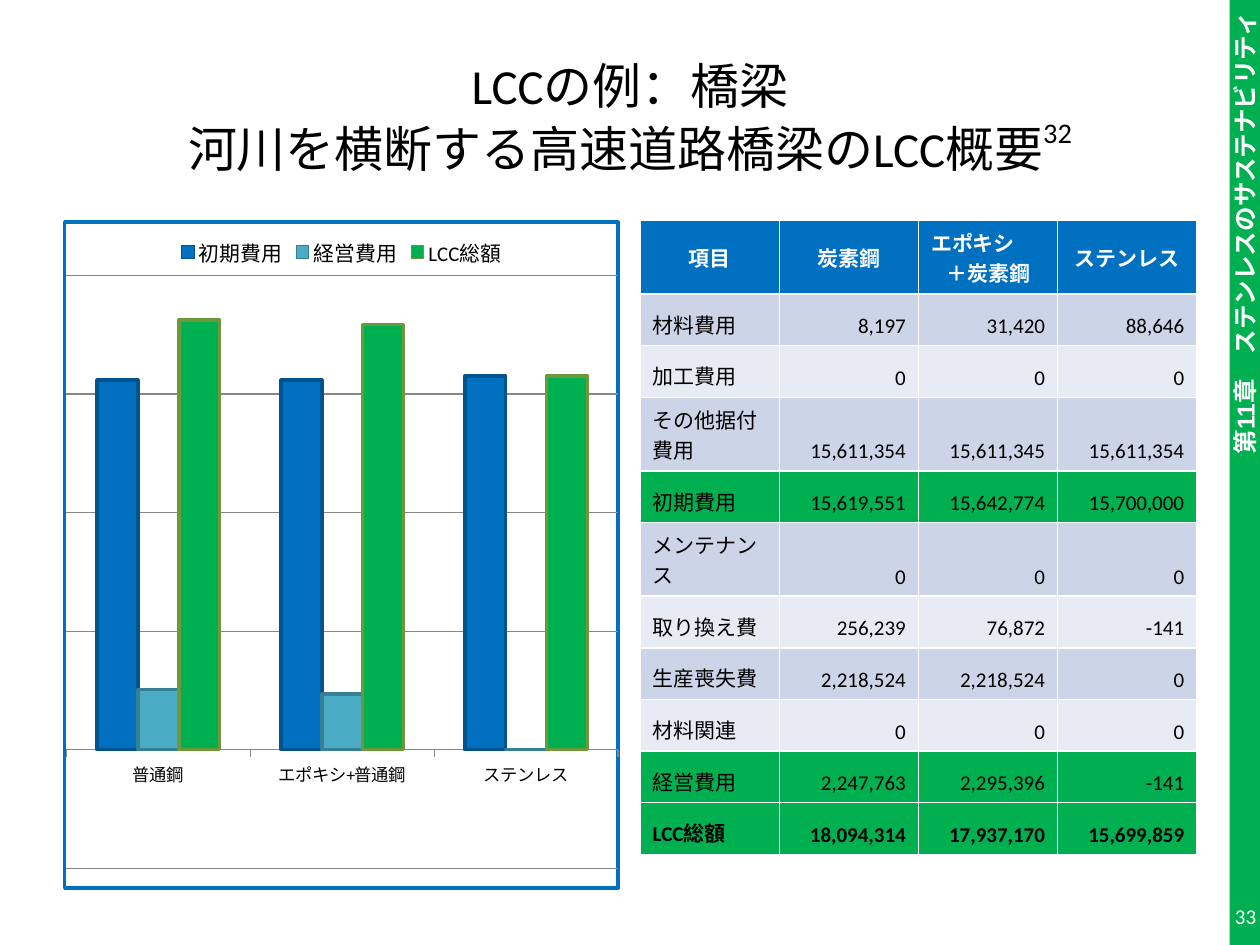
from dataclasses import dataclass

from pptx import Presentation
from pptx.chart.data import CategoryChartData
from pptx.dml.color import RGBColor
from pptx.enum.chart import XL_CHART_TYPE as ChartType, XL_LEGEND_POSITION as LegendPosition
from pptx.enum.chart import XL_TICK_MARK as TickMark
from pptx.enum.shapes import MSO_SHAPE as Shape
from pptx.enum.text import MSO_ANCHOR as Anchor, PP_ALIGN as Align
from pptx.oxml import parse_xml
from pptx.oxml.ns import nsdecls, qn
from pptx.util import Inches, Pt


@dataclass(frozen=True)
class Theme:
    blue: str = "0070C0"
    green: str = "00B050"
    white: str = "FFFFFF"
    black: str = "000000"
    grid: str = "868686"
    bands: tuple = ("CCD5E8", "E7EBF4")
    font: str = "Calibri"
    sidebar_font: str = "Arial"
    title_size: int = 28
    sidebar_size: int = 14
    body_size: int = 12
    axis_size: int = 10


THEME = Theme()
TITLE = "LCCの例：橋梁\v河川を横断する高速道路橋梁のLCC概要"
CATEGORIES = ["普通鋼", "エポキシ+普通鋼", "ステンレス"]
SERIES = [
    ("初期費用", (86, 86, 87), THEME.blue, "00538E"),
    ("経営費用", (14, 13, 0), "4BACC6", "377F92"),
    ("LCC総額", (100, 99, 87), THEME.green, "6C9A3B"),
]
GRID_STEP = 27.6
HEADER = ["項目", "炭素鋼", "エポキシ\n＋炭素鋼", "ステンレス"]
ROWS = [
    ["材料費用", "8,197", "31,420", "88,646"],
    ["加工費用", "0", "0", "0"],
    ["その他据付費用", "15,611,354", "15,611,345", "15,611,354"],
    ["初期費用", "15,619,551", "15,642,774", "15,700,000"],
    ["メンテナンス", "0", "0", "0"],
    ["取り換え費", "256,239", "76,872", "-141"],
    ["生産喪失費", "2,218,524", "2,218,524", "0"],
    ["材料関連", "0", "0", "0"],
    ["経営費用", "2,247,763", "2,295,396", "-141"],
    ["LCC総額", "18,094,314", "17,937,170", "15,699,859"],
]
TOTALS = ("初期費用", "経営費用", "LCC総額")


def color(value):
    return RGBColor.from_string(value)


def set_fill(target, value):
    target.fill.solid()
    target.fill.fore_color.rgb = color(value)


def set_line(line, value, width):
    line.color.rgb = color(value)
    line.width = Pt(width)


def set_font(font, size, value, name=THEME.font, bold=False):
    font.size = Pt(size)
    font.name = name
    font.bold = bold
    font.color.rgb = color(value)


def add_sidebar(slide):
    shape = slide.shapes.add_shape(Shape.RECTANGLE, Inches(9.76), 0, Inches(0.24), Inches(7.5))
    shape.shadow.inherit = False
    set_fill(shape, THEME.green)
    shape.line.fill.background()
    frame = shape.text_frame
    frame.text = "第11章\u3000ステンレスのサステナビリティ".replace("\u3000", "　")
    frame.vertical_anchor = Anchor.MIDDLE
    frame._txBody.bodyPr.set("vert", "vert270")
    paragraph = frame.paragraphs[0]
    paragraph.alignment = Align.RIGHT
    set_font(paragraph.font, THEME.sidebar_size, THEME.white, THEME.sidebar_font, True)


def format_title(slide):
    title = slide.shapes.title
    title.left, title.top = Inches(0.5), Inches(0.3)
    title.width, title.height = Inches(9), Inches(1.25)
    frame = title.text_frame
    frame.text = TITLE
    frame.vertical_anchor = Anchor.MIDDLE
    paragraph = frame.paragraphs[0]
    paragraph.alignment = Align.CENTER
    set_font(paragraph.font, THEME.title_size, THEME.black)
    note = paragraph.add_run()
    note.text = "32"
    note.font._element.set("baseline", "50000")


def format_axes(chart):
    axis = chart.value_axis
    axis.minimum_scale, axis.maximum_scale = -GRID_STEP, 4 * GRID_STEP
    axis.major_unit = GRID_STEP
    axis.visible = False
    axis.has_major_gridlines = True
    set_line(axis.major_gridlines.format.line, THEME.grid, 0.75)
    axis = chart.category_axis
    axis.major_tick_mark = TickMark.OUTSIDE
    set_line(axis.format.line, THEME.grid, 0.75)


def format_chart_area(chart):
    chart_space = chart.element
    chart_space.find(qn("c:chart")).addnext(parse_xml(
        f'<c:spPr {nsdecls("c", "a")}>'
        f'<a:solidFill><a:srgbClr val="{THEME.white}"/></a:solidFill>'
        f'<a:ln w="{Pt(2)}"><a:solidFill><a:srgbClr val="{THEME.blue}"/></a:solidFill></a:ln>'
        "</c:spPr>"))
    plot_area = chart_space.find(".//" + qn("c:plotArea"))
    for layout in plot_area.findall(qn("c:layout")):
        plot_area.remove(layout)
    position = "".join(f'<c:{name} val="{value}"/>' for name, value in (
        ("layoutTarget", "inner"), ("xMode", "edge"), ("yMode", "edge"),
        ("x", 0.003), ("y", 0.08), ("w", 0.997), ("h", 0.891)))
    plot_area.insert(0, parse_xml(
        f'<c:layout {nsdecls("c")}><c:manualLayout>{position}</c:manualLayout></c:layout>'))


def add_cost_chart(slide):
    data = CategoryChartData()
    data.categories = CATEGORIES
    for name, values, _, _ in SERIES:
        data.add_series(name, values)
    chart = slide.shapes.add_chart(ChartType.COLUMN_CLUSTERED, Inches(0.5), Inches(1.75),
                                   Inches(4.42), Inches(5.31), data).chart
    chart.has_title = False
    set_font(chart.font, THEME.axis_size, THEME.black)
    chart.has_legend = True
    chart.legend.position = LegendPosition.TOP
    chart.legend.include_in_layout = False
    set_font(chart.legend.font, THEME.body_size, THEME.black)
    plot = chart.plots[0]
    plot.gap_width = 150
    plot.overlap = 0
    plot.vary_by_categories = False
    for series, (_, _, fill, outline) in zip(plot.series, SERIES):
        set_fill(series.format, fill)
        set_line(series.format.line, outline, 2)
    format_axes(chart)
    format_chart_area(chart)


def fill_cell(cell, text, fill, anchor, alignment, font_color, bold):
    cell.text = text
    cell.vertical_anchor = anchor
    set_fill(cell, fill)
    for paragraph in cell.text_frame.paragraphs:
        paragraph.alignment = alignment
        set_font(paragraph.font, THEME.body_size, font_color, bold=bold)


def add_cost_table(slide):
    table = slide.shapes.add_table(len(ROWS) + 1, len(HEADER), Inches(5.08), Inches(1.75),
                                   Inches(4.42), Inches(4.47)).table
    for row in table.rows:
        row.height = Inches(0.41)
    for column, text in enumerate(HEADER):
        fill_cell(table.cell(0, column), text, THEME.blue, Anchor.MIDDLE, Align.CENTER,
                  THEME.white, True)
    table.cell(0, 2).text_frame.paragraphs[0].alignment = Align.LEFT
    for index, row in enumerate(ROWS):
        fill = THEME.green if row[0] in TOTALS else THEME.bands[index % 2]
        for column, text in enumerate(row):
            alignment = Align.RIGHT if column else Align.LEFT
            fill_cell(table.cell(index + 1, column), text, fill, Anchor.BOTTOM, alignment,
                      THEME.black, row is ROWS[-1])


def add_page_number(slide):
    box = slide.shapes.add_textbox(Inches(9.54), Inches(7.07), Inches(0.43), Inches(0.4))
    frame = box.text_frame
    frame.word_wrap = True
    frame.margin_left = frame.margin_top = frame.margin_right = frame.margin_bottom = 0
    frame.vertical_anchor = Anchor.MIDDLE
    frame.text = "33"
    paragraph = frame.paragraphs[0]
    paragraph.alignment = Align.RIGHT
    set_font(paragraph.font, THEME.body_size, THEME.white)


def main():
    presentation = Presentation()
    presentation.slide_width, presentation.slide_height = Inches(10), Inches(7.5)
    slide = presentation.slides.add_slide(presentation.slide_layouts[5])
    add_sidebar(slide)
    format_title(slide)
    add_cost_chart(slide)
    add_cost_table(slide)
    add_page_number(slide)
    presentation.save("out.pptx")


if __name__ == "__main__":
    main()
